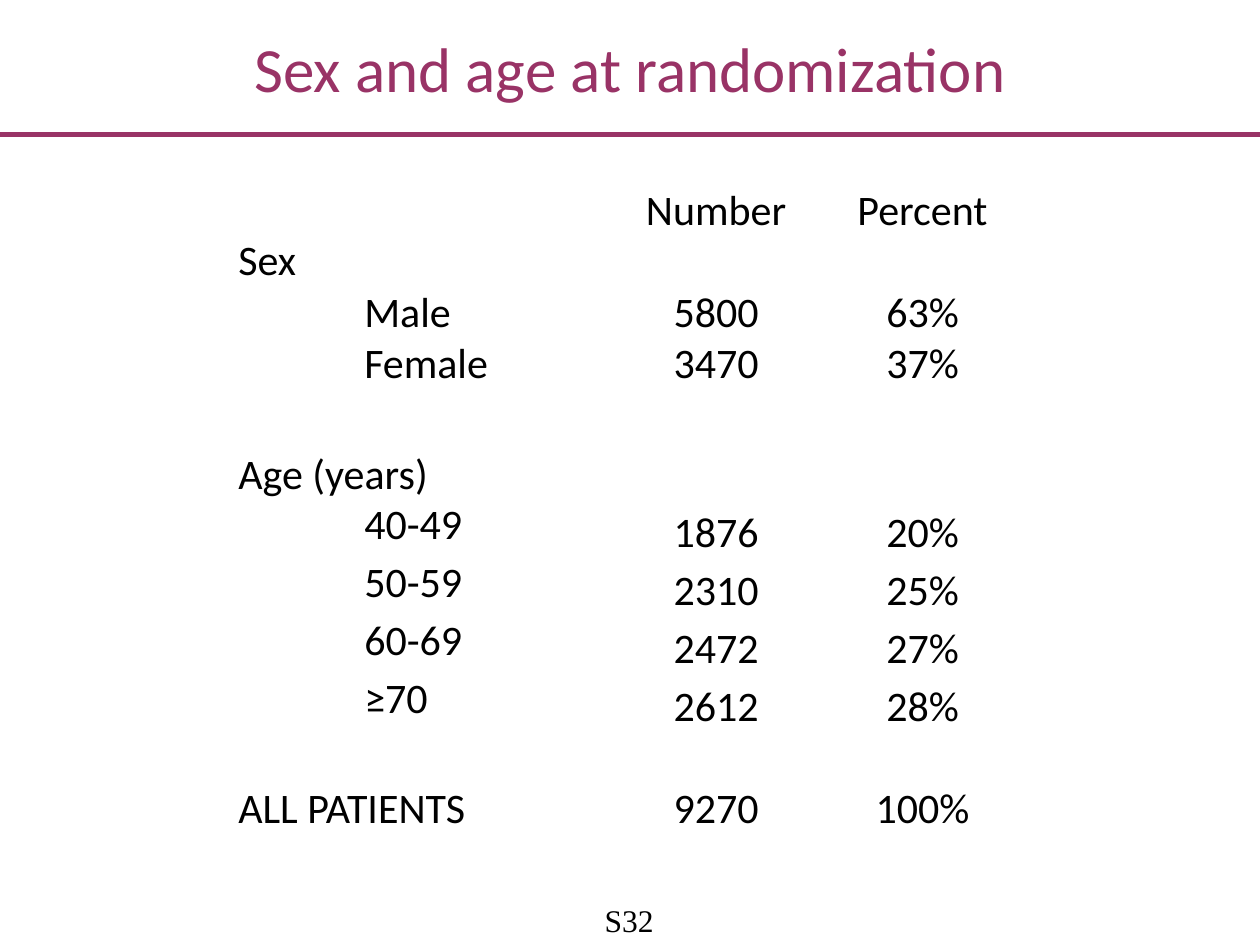
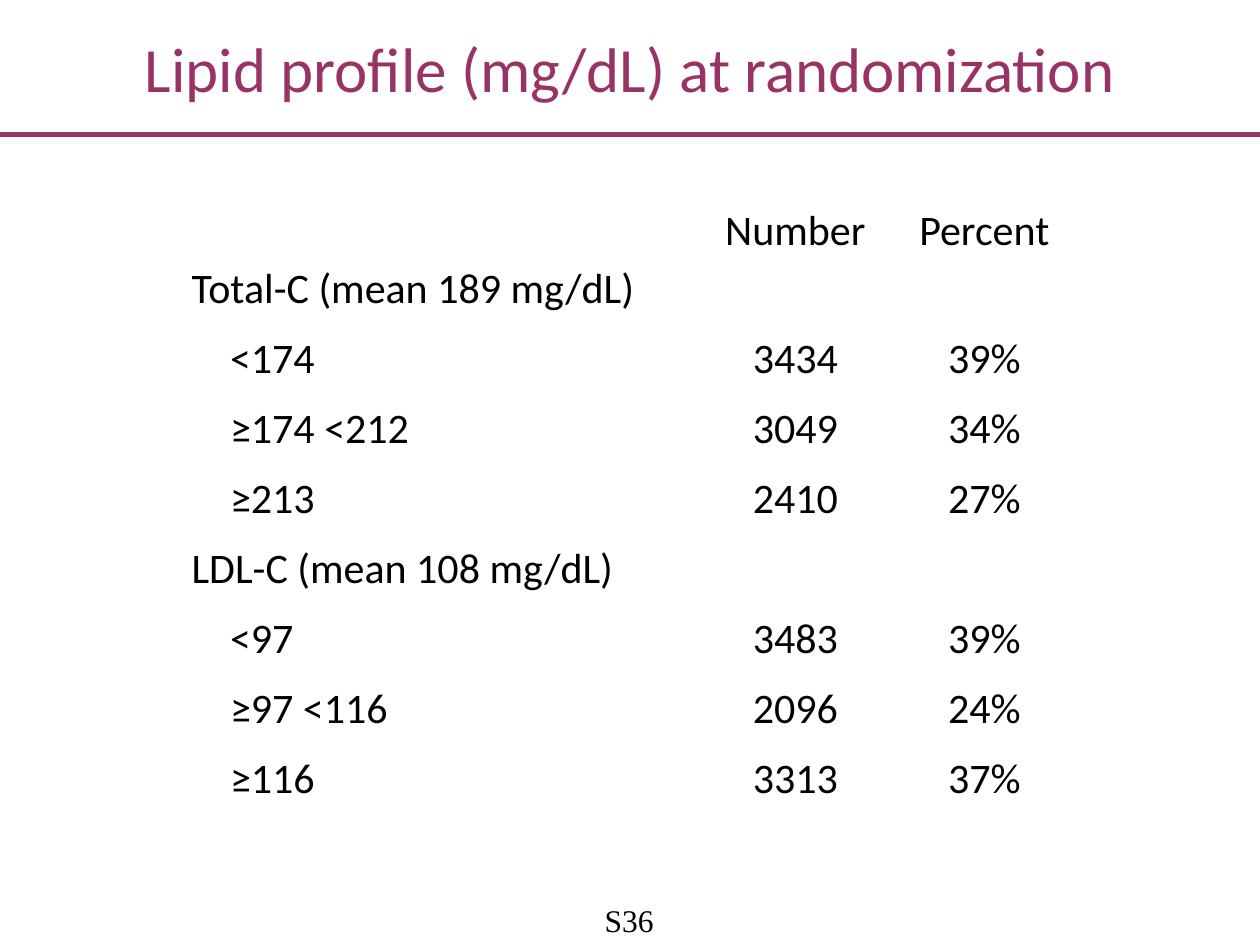
"""Build two slides of baseline patient tables."""
import lxml.etree
import pptx
import pptx.dml.color
import pptx.enum.shapes
import pptx.enum.text
import pptx.oxml.ns
import pptx.util

Pt = pptx.util.Pt
ALIGN = pptx.enum.text.PP_ALIGN
ANCHOR = pptx.enum.text.MSO_ANCHOR
PLUM = pptx.dml.color.RGBColor(0x99, 0x33, 0x66)
BLACK = pptx.dml.color.RGBColor(0, 0, 0)
WIDE, HIGH, BAND = 720, 540, 77
SANS, SERIF = "Calibri", "Times New Roman"
PAD = 3
LOOSE = 1.15

SEX_AGE = [
    ("", "Number", "Percent"),
    ("Sex", "", ""),
    ("\tMale", "5800", "63%"),
    ("\tFemale", "3470", "37%"),
    ("", "", ""),
    ("Age (years)", "", ""),
    ("\t40-49", "1876", "20%"),
    ("\t50-59", "2310", "25%"),
    ("\t60-69", "2472", "27%"),
    ("\t≥70", "2612", "28%"),
    ("", "", ""),
    ("ALL PATIENTS", "9270", "100%"),
]
LIPIDS = [
    ("", "Number", "Percent"),
    ("Total-C (mean 189 mg/dL)", "", ""),
    ("\t<174", "3434", "39%"),
    ("\t≥174 <212", "3049", "34%"),
    ("\t≥213", "2410", "27%"),
    ("LDL-C (mean 108 mg/dL)", "", ""),
    ("\t<97", "3483", "39%"),
    ("\t≥97 <116", "2096", "24%"),
    ("\t≥116", "3313", "37%"),
]


def style(para, text, face, size, color, align):
    para.text = text
    para.alignment = align
    para.font.name = face
    para.font.size = Pt(size)
    para.font.color.rgb = color


def add_text(slide, box, text, face, size, color, wrap=True, pad=0):
    frame = slide.shapes.add_textbox(*map(Pt, box)).text_frame
    frame.word_wrap = wrap
    frame.vertical_anchor = ANCHOR.MIDDLE
    frame.margin_left = frame.margin_right = Pt(pad)
    frame.margin_top = frame.margin_bottom = Pt(pad / 2)
    style(frame.paragraphs[0], text, face, size, color, ALIGN.CENTER)


def add_rule(slide):
    kind = pptx.enum.shapes.MSO_CONNECTOR.STRAIGHT
    rule = slide.shapes.add_connector(kind, 0, Pt(BAND), Pt(WIDE), Pt(BAND))
    rule.line.color.rgb = PLUM
    rule.line.width = Pt(3)
    props = rule.element.find(pptx.oxml.ns.qn("p:spPr"))
    lxml.etree.SubElement(props, pptx.oxml.ns.qn("a:effectLst"))


def add_page(deck, title, number):
    slide = deck.slides.add_slide(deck.slide_layouts[6])
    add_rule(slide)
    add_text(slide, (344, 515, 31, 21.6), number, SERIF, 18, BLACK, wrap=False)
    add_text(slide, (0, 0, WIDE, BAND), title, SANS, 36, PLUM, pad=7.2)
    return slide


def fill_cell(cell, text, indent, label, head, loose):
    cell.fill.background()
    cell.margin_left = Pt(PAD + indent * text.startswith("\t"))
    cell.margin_right = Pt(PAD)
    cell.margin_top = cell.margin_bottom = 0
    cell.vertical_anchor = ANCHOR.BOTTOM if head else ANCHOR.TOP
    if text:
        para = cell.text_frame.paragraphs[0]
        align = ALIGN.LEFT if label else ALIGN.CENTER
        style(para, text.strip(), SANS, 24, BLACK, align)
        if loose:
            para.line_spacing = LOOSE


def add_grid(slide, rows, spot, widths, height, indent, loose, snug=False):
    """Draw rows; snug keeps indented labels at single spacing."""
    size = sum(widths), height * len(rows)
    shape = slide.shapes.add_table(
        len(rows), len(widths), *map(Pt, spot + size))
    grid = shape.table
    grid.first_row = grid.horz_banding = False
    for col, width in zip(grid.columns, widths):
        col.width = Pt(width)
    for i, row in enumerate(rows):
        grid.rows[i].height = Pt(height)
        for j, text in enumerate(row):
            tight = snug and text.startswith("\t")
            fill_cell(grid.cell(i, j), text, indent, j == 0, i == 0,
                      i in loose and not tight)


def main():
    deck = pptx.Presentation()
    deck.slide_width, deck.slide_height = Pt(WIDE), Pt(HIGH)
    page = add_page(deck, "Sex and age at randomization", "S32")
    add_grid(page, SEX_AGE, (133.2, 101.5), (217, 118, 118), 29.5, 72,
             {0, *range(5, 10)}, snug=True)
    page = add_page(deck, "Lipid profile (mg/dL) at randomization", "S36")
    add_grid(page, LIPIDS, (106.5, 106.5), (294, 108, 108), 40, 22,
             range(len(LIPIDS)))
    deck.save("out.pptx")


if __name__ == "__main__":
    main()
